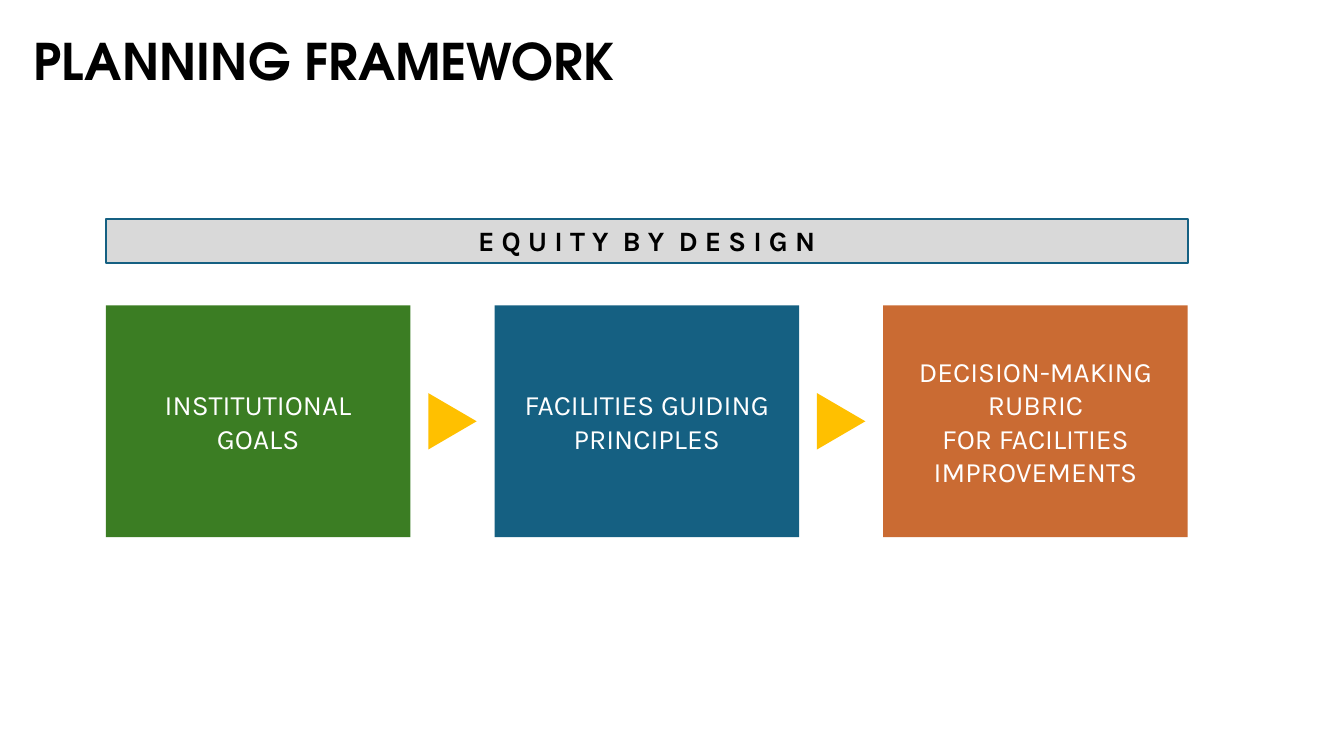
from pptx import Presentation
from pptx.dml.color import RGBColor
from pptx.enum.shapes import MSO_SHAPE
from pptx.enum.text import MSO_ANCHOR, MSO_AUTO_SIZE, PP_ALIGN
from pptx.util import Inches, Pt


def rgb(value):
    return RGBColor.from_string(value)


class Deck:
    """Holds the style and the current slide."""
    title_font = "TeX Gyre Adventor"
    body_font = "Karla"
    blue = "156082"

    def __init__(self):
        self.prs = Presentation()
        self.prs.slide_width = Inches(13.33)
        self.prs.slide_height = Inches(7.5)
        self.s = self.prs.slides.add_slide(self.prs.slide_layouts[5])

    def format_run(self, r, font, size, color, bold=False):
        r.font.name = font
        r.font.size = Pt(size)
        r.font.bold = bold
        r.font.color.rgb = rgb(color)

    def title(self, text, x, y, w, h):
        sp = self.s.shapes.title
        sp.left, sp.top, sp.width, sp.height = map(Inches, (x, y, w, h))
        tf = sp.text_frame
        tf.text = text
        tf.word_wrap = True
        tf.auto_size = MSO_AUTO_SIZE.NONE
        tf.vertical_anchor = MSO_ANCHOR.MIDDLE
        p = tf.paragraphs[0]
        p.alignment = PP_ALIGN.LEFT
        p.line_spacing = 0.9
        self.format_run(p.runs[0], self.title_font, 36, "000000", True)

    def shape(self, kind, x, y, w, h, fill, line=None):
        sp = self.s.shapes.add_shape(kind, *map(Inches, (x, y, w, h)))
        sp.shadow.inherit = False
        sp.fill.solid()
        sp.fill.fore_color.rgb = rgb(fill)
        if line:
            sp.line.color.rgb = rgb(line)
            sp.line.width = Pt(1.5)
        else:
            sp.line.fill.background()
        return sp

    def box(self, text, x, y, w, h, fill):
        sp = self.shape(MSO_SHAPE.RECTANGLE, x, y, w, h, fill)
        tf = sp.text_frame
        tf.text = text
        tf.word_wrap = True
        tf.vertical_anchor = MSO_ANCHOR.MIDDLE
        for p in tf.paragraphs:
            p.alignment = PP_ALIGN.CENTER
            self.format_run(p.runs[0], self.body_font, 20, "FFFFFF")

    def banner(self, text, x, y, w, h):
        sp = self.shape(MSO_SHAPE.RECTANGLE, x, y, w, h, "D9D9D9", self.blue)
        tf = sp.text_frame
        tf.word_wrap = True
        tf.auto_size = MSO_AUTO_SIZE.SHAPE_TO_FIT_TEXT
        tf.vertical_anchor = MSO_ANCHOR.TOP
        p = tf.paragraphs[0]
        p.alignment = PP_ALIGN.CENTER
        # Letters stand apart; the space between words is widened
        for i, word in enumerate(text.split()):
            if i:
                gap = p.add_run()
                gap.text = " "
                self.format_run(gap, self.body_font, 20, "000000", True)
                gap.font._element.set("spc", "500")
            r = p.add_run()
            r.text = " ".join(word)
            self.format_run(r, self.body_font, 20, "000000", True)

    def arrow(self, center_x, center_y, w, h):
        sp = self.shape(MSO_SHAPE.ISOSCELES_TRIANGLE, center_x - w / 2,
                        center_y - h / 2, w, h, "FFC000")
        sp.rotation = 90


def main():
    deck = Deck()
    deck.title("PLANNING FRAMEWORK", 0.23, 0, 6.18, 1.28)

    # Three steps at an equal pitch, with an arrow in each gap
    left, top, width, height, pitch = 1.05, 3.03, 3.02, 2.3, 3.855
    steps = [
        ("INSTITUTIONAL\nGOALS", "3B7D23"),
        ("FACILITIES GUIDING PRINCIPLES", deck.blue),
        ("DECISION-MAKING RUBRIC\nFOR FACILITIES IMPROVEMENTS", "CA6B33"),
    ]
    for i, (text, fill) in enumerate(steps):
        x = left + i * pitch
        deck.box(text, x, top, width, height, fill)
        if i:
            deck.arrow(x - (pitch - width) / 2, top + height / 2, 0.56, 0.48)

    # Banner spanning all steps
    deck.banner("EQUITY BY DESIGN", left, 2.17, 2 * pitch + width, 0.44)

    deck.prs.save("out.pptx")


if __name__ == "__main__":
    main()
